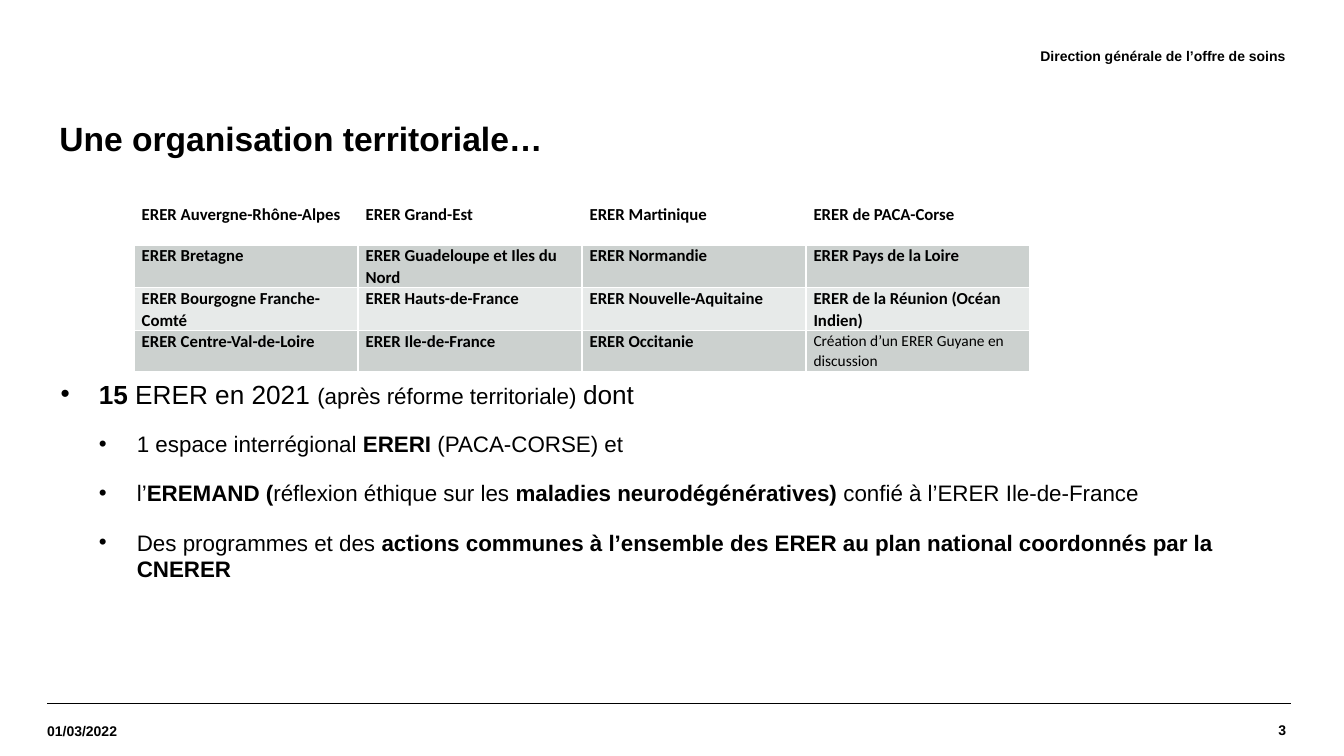
"""Build the slide on the territorial organisation of the ERER."""
from lxml import etree
from pptx import Presentation
from pptx import util as u
from pptx.dml.color import RGBColor
from pptx.enum import shapes, text
from pptx.oxml import ns


class Theme:
    ink = RGBColor.from_string("000000")
    dark_band = RGBColor.from_string("CCD1CF")
    light_band = RGBColor.from_string("E7EAE9")
    border = "FFFFFF"
    font, table_font = "Arial", "Calibri"
    title, lead, body = 24, 18.7, 16
    cell, remark, footer = 12, 11, 10


def write(paragraph, wording, size=Theme.body, bold=False, font=Theme.font):
    run = paragraph.add_run()
    run.text = wording
    run.font.size = u.Pt(size)
    run.font.bold = bold
    run.font.name = font
    run.font.color.rgb = Theme.ink


def place(shape, left, top, width, height):
    shape.left, shape.top = u.Cm(left), u.Cm(top)
    shape.width, shape.height = u.Cm(width), u.Cm(height)


presentation = Presentation()
presentation.slide_width = u.Cm(33.87)
presentation.slide_height = u.Cm(19.05)
slide = presentation.slides.add_slide(presentation.slide_layouts[1])

for left in (1.19, 1.32):
    rule = slide.shapes.add_connector(
        shapes.MSO_CONNECTOR.STRAIGHT, u.Cm(left), u.Cm(17.73), u.Cm(left + 31.22), u.Cm(17.73))
    rule.line.color.rgb = Theme.ink
    rule.line.width = u.Pt(0.8)
    etree.SubElement(rule._element.spPr, ns.qn("a:effectLst"))

title = slide.shapes.title
place(title, 1.19, 2.54, 31.19, 2.01)
title.text_frame.vertical_anchor = text.MSO_ANCHOR.MIDDLE
title.text_frame.auto_size = text.MSO_AUTO_SIZE.NONE
paragraph = title.text_frame.paragraphs[0]
paragraph.alignment = text.PP_ALIGN.LEFT
paragraph.line_spacing = 0.9
paragraph.space_before = u.Pt(0)
paragraph._p.get_or_add_pPr().set("marL", str(u.Cm(0.05)))
write(paragraph, "Une organisation territoriale…", size=Theme.title, bold=True)

LABELS = [
    ("3", 27.41, 17.73, 5, 1.32, text.PP_ALIGN.RIGHT),
    ("01/03/2022", 1.19, 17.78, 4.34, 1.27, text.PP_ALIGN.LEFT),
    ("Direction générale de l’offre de soins", 10.62, 0.74, 21.77, 1.32, text.PP_ALIGN.RIGHT),
]
for wording, left, top, width, height, alignment in LABELS:
    label = slide.shapes.add_textbox(u.Cm(left), u.Cm(top), u.Cm(width), u.Cm(height))
    frame = label.text_frame
    frame.word_wrap = True
    frame.vertical_anchor = text.MSO_ANCHOR.MIDDLE
    frame.margin_left = frame.margin_top = frame.margin_right = frame.margin_bottom = 0
    frame.paragraphs[0].alignment = alignment
    write(frame.paragraphs[0], wording, size=Theme.footer, bold=True)

BULLETS = [
    [("15 ", Theme.lead, True), ("ERER en 2021 ", Theme.lead, False),
     ("(après réforme territoriale) ", Theme.body, False), ("dont", Theme.lead, False)],
    [("1 espace interrégional ", Theme.body, False), ("ERERI", Theme.body, True),
     (" (PACA-CORSE) et", Theme.body, False)],
    [("l’", Theme.body, False), ("EREMAND (", Theme.body, True),
     ("réflexion éthique sur les ", Theme.body, False),
     ("maladies neurodégénératives)", Theme.body, True),
     (" confié à l’ERER Ile-de-France", Theme.body, False)],
    [("Des programmes et des ", Theme.body, False),
     ("actions communes à l’ensemble des ERER au plan national coordonnés par la CNERER",
      Theme.body, True)],
]
body = slide.placeholders[1]
place(body, 1.19, 9.53, 31.19, 8)
frame = body.text_frame
frame.auto_size = text.MSO_AUTO_SIZE.NONE
frame.margin_left = frame.margin_top = frame.margin_right = frame.margin_bottom = 0
for index, pieces in enumerate(BULLETS):
    paragraph = frame.add_paragraph() if index else frame.paragraphs[0]
    paragraph.level = 1 if index else 0
    properties = paragraph._p.get_or_add_pPr()
    properties.set("marL", str(u.Cm(2.26 if index else 1.3)))
    properties.set("indent", str(u.Cm(-0.96)))
    etree.SubElement(properties, ns.qn("a:buFont"), typeface=Theme.font)
    etree.SubElement(properties, ns.qn("a:buChar"), char="•")
    paragraph.space_before = u.Pt(8 if index else 0)
    paragraph.space_after = u.Pt(8 if index else 6.7)
    for wording, size, bold in pieces:
        write(paragraph, wording, size=size, bold=bold)

REGIONS = [
    ["ERER Auvergne-Rhône-Alpes", "ERER Grand-Est", "ERER Martinique", "ERER de PACA-Corse"],
    ["ERER Bretagne", "ERER Guadeloupe et Iles du Nord", "ERER Normandie",
     "ERER Pays de la Loire"],
    ["ERER Bourgogne Franche-Comté", "ERER Hauts-de-France", "ERER Nouvelle-Aquitaine",
     "ERER de la Réunion (Océan Indien)"],
    ["ERER Centre-Val-de-Loire", "ERER Ile-de-France", "ERER Occitanie",
     "Création d’un ERER Guyane en discussion"],
]
table = slide.shapes.add_table(
    4, 4, u.Cm(3.38), u.Cm(5.11), u.Cm(22.58), u.Cm(4.16)).table
for row_index, names in enumerate(REGIONS):
    for column_index, name in enumerate(names):
        cell = table.cell(row_index, column_index)
        cell.margin_left = cell.margin_right = u.Cm(0.19)
        cell.margin_top = cell.margin_bottom = 0
        for side in ("L", "R", "T", "B"):
            under_header = (row_index, side) in ((0, "B"), (1, "T"))
            line = etree.SubElement(cell._tc.get_or_add_tcPr(), ns.qn(f"a:ln{side}"),
                                    w=str(u.Pt(3 if under_header else 1)))
            fill = etree.SubElement(line, ns.qn("a:solidFill"))
            etree.SubElement(fill, ns.qn("a:srgbClr"), val=Theme.border)
        if row_index == 0:
            cell.fill.background()
        else:
            cell.fill.solid()
            cell.fill.fore_color.rgb = Theme.dark_band if row_index % 2 else Theme.light_band
        paragraph = cell.text_frame.paragraphs[0]
        paragraph.line_spacing = 1.07
        is_region = name.startswith("ERER")
        write(paragraph, name, size=Theme.cell if is_region else Theme.remark,
              bold=is_region, font=Theme.table_font)

presentation.save("out.pptx")
